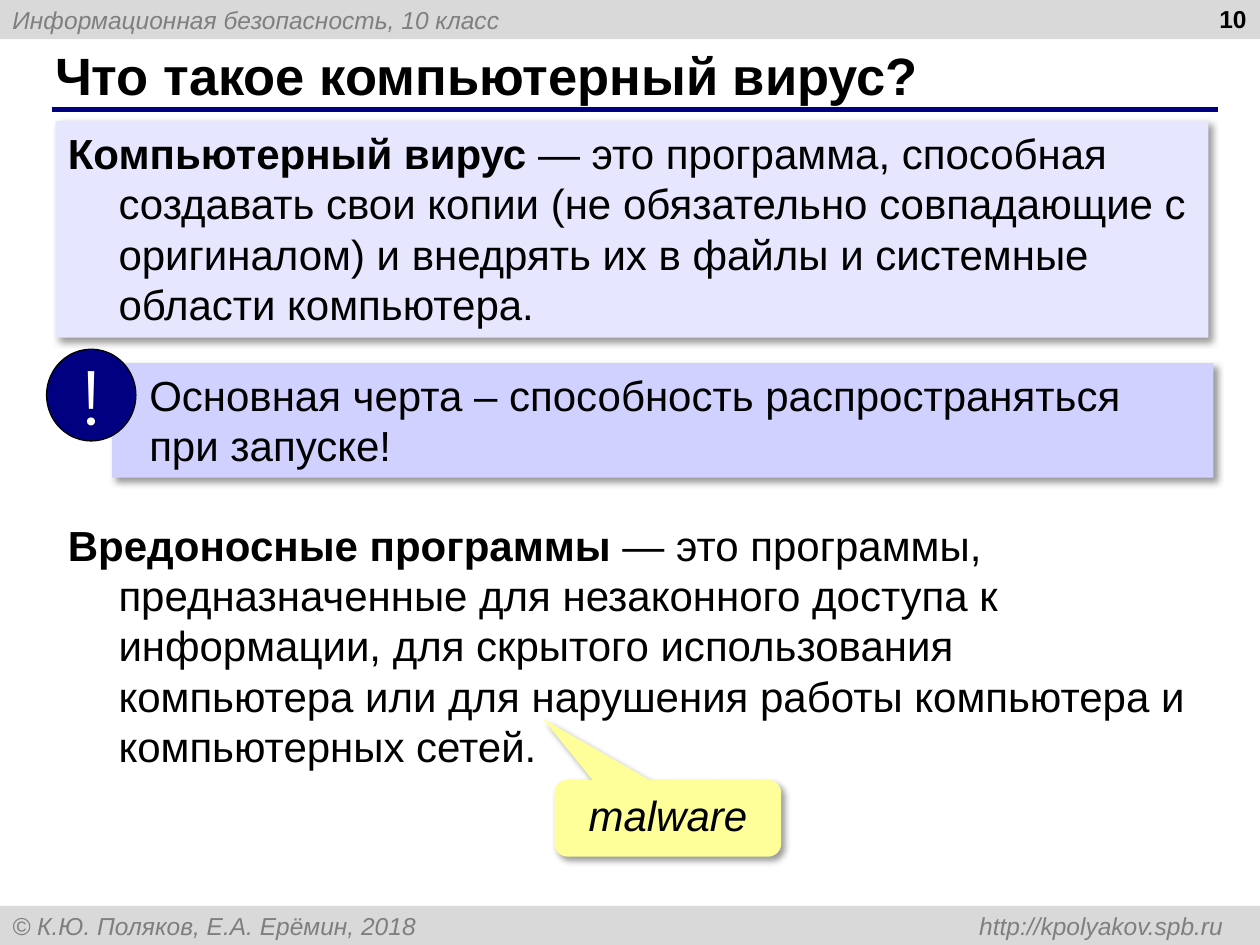
from lxml.etree import SubElement
from pptx import Presentation
from pptx.dml.color import RGBColor
from pptx.enum.shapes import MSO_CONNECTOR as Connector, MSO_SHAPE as Shape
from pptx.enum.text import MSO_ANCHOR as Anchor, PP_ALIGN as Align
from pptx.oxml.ns import qn
from pptx.util import Cm, Pt

COLORS = {
    "bar": "D9D9D9", "muted": "7F7F7F", "navy": "000080", "black": "000000",
    "white": "FFFFFF", "lavender": "E6E6FF", "violet": "D1D1FF", "yellow": "FFFF99",
}
WIDTH, HEIGHT, BAR = 25.4, 19.05, 0.79


def rgb(name):
    """Return the named colour."""
    return RGBColor.from_string(COLORS[name])


def add_box(slide, box, fill=None, kind=Shape.RECTANGLE):
    """Add a filled shape without outline, or a text box if there is no fill."""
    lengths = [Cm(length) for length in box]
    if fill is None:
        shape = slide.shapes.add_textbox(*lengths)
    else:
        shape = slide.shapes.add_shape(kind, *lengths)
        shape.fill.solid()
        shape.fill.fore_color.rgb = rgb(fill)
        shape.line.fill.background()
        shape.shadow.inherit = False
    shape.text_frame.word_wrap = True
    return shape


def write(shape, text, size, color="black", align=Align.LEFT, anchor=Anchor.TOP,
          font="Arial", bold=False, italic=False):
    """Set the text of a shape and format its runs."""
    frame = shape.text_frame
    frame.text = text
    frame.vertical_anchor = anchor
    paragraph = frame.paragraphs[0]
    paragraph.alignment = align
    for run in paragraph.runs:
        run.font.name, run.font.size = font, Pt(size)
        run.font.bold, run.font.italic = bold, italic
        run.font.color.rgb = rgb(color)
    return paragraph


def set_indent(paragraph, margin, indent=0):
    """Set the left margin and first-line indent of a paragraph."""
    properties = paragraph._p.get_or_add_pPr()
    properties.set("marL", str(Cm(margin)))
    properties.set("indent", str(Cm(indent)))


def add_shadow(shape):
    """Give a shape a soft shadow to the lower right."""
    effects = shape._element.spPr.find(qn("a:effectLst"))
    shadow = SubElement(effects, qn("a:outerShdw"), blurRad=str(Pt(4)), dist=str(Pt(3)),
                        dir="2700000", algn="tl", rotWithShape="0")
    color = SubElement(shadow, qn("a:srgbClr"), val=COLORS["black"])
    SubElement(color, qn("a:alpha"), val="40000")


def add_bar(slide, box, text, tab=None):
    """Add a grey page bar, with a right tab stop if one is given."""
    bar = add_box(slide, box, "bar")
    paragraph = write(bar, text, 14, "muted", anchor=Anchor.MIDDLE, italic=True)
    if tab:
        stops = SubElement(paragraph._p.get_or_add_pPr(), qn("a:tabLst"))
        SubElement(stops, qn("a:tab"), pos=str(Cm(tab)), algn="r")


def add_title(slide, box, text):
    """Add the heading with a rule under it."""
    left, top, width, height = box
    write(add_box(slide, box), text, 30, anchor=Anchor.MIDDLE, bold=True)
    rule_top = Cm(top + height + 0.05)
    rule = slide.shapes.add_connector(
        Connector.STRAIGHT, Cm(left + 0.18), rule_top, Cm(left + width + 0.43), rule_top)
    rule.line.color.rgb = rgb("navy")
    rule.line.width = Pt(3)
    SubElement(rule._element.spPr, qn("a:effectLst"))


def add_definition(slide, box, term, meaning, fill=None):
    """Add a definition with a bold term and a hanging indent."""
    shape = add_box(slide, box, fill)
    if fill:
        add_shadow(shape)
    paragraph = write(shape, term, 24, bold=True)
    set_indent(paragraph, 1.02, -1.02)
    run = paragraph.add_run()
    run.text = meaning
    run.font.name, run.font.size = "Arial", Pt(24)
    run.font.bold = False
    run.font.color.rgb = rgb("black")


def add_key_point(slide, box, text):
    """Add a panel with an exclamation badge on its upper left corner."""
    left, top, width, height = box
    panel = add_box(slide, box, "violet")
    add_shadow(panel)
    set_indent(write(panel, text, 24), 0.5)
    badge = add_box(slide, (left - 1.32, top - 0.28, 1.8, 1.85), "navy", Shape.OVAL)
    badge.line.color.rgb = rgb("black")
    badge.line.width = Pt(0.75)
    write(badge, "!", 44, "white", Align.CENTER, Anchor.MIDDLE, "Montserrat")
    badge.text_frame.word_wrap = False


def add_callout(slide, box, text):
    """Add a speech callout that points up and to the left."""
    callout = add_box(slide, box, "yellow", Shape.ROUNDED_RECTANGULAR_CALLOUT)
    for index, value in enumerate((-0.55, -1.29, 0.17)):
        callout.adjustments[index] = value
    add_shadow(callout)
    write(callout, text, 24, align=Align.CENTER, italic=True)


def main():
    """Build the slide and save it."""
    presentation = Presentation()
    presentation.slide_width, presentation.slide_height = Cm(WIDTH), Cm(HEIGHT)
    slide = presentation.slides.add_slide(presentation.slide_layouts[6])
    add_bar(slide, (0, 0, WIDTH, BAR), "Информационная безопасность, 10 класс")
    add_bar(slide, (0, HEIGHT - BAR, WIDTH, BAR),
            "© К.Ю. Поляков, Е.А. Ерёмин, 2018\thttp://kpolyakov.spb.ru", tab=24.41)
    add_title(slide, (0.86, 0.84, 23.27, 1.32), "Что такое компьютерный вирус?")
    write(add_box(slide, (19.46, -0.05, 5.92, 1.32)), "10", 14, align=Align.RIGHT, bold=True)
    add_definition(
        slide, (1.12, 2.44, 23.24, 4.37), "Компьютерный вирус",
        " — это программа, способная создавать свои копии (не обязательно совпадающие "
        "с оригиналом) и внедрять их в файлы и системные области компьютера.", "lavender")
    add_key_point(slide, (2.26, 7.32, 22.2, 2.31),
                  "Основная черта – способность распространяться при запуске!")
    add_definition(
        slide, (1.12, 10.34, 23.32, 5.38), "Вредоносные программы",
        " — это программы, предназначенные для незаконного доступа к информации, для "
        "скрытого использования компьютера или для нарушения работы компьютера и "
        "компьютерных сетей.")
    add_callout(slide, (11.18, 15.72, 4.57, 1.55), "malware")
    presentation.save("out.pptx")


if __name__ == "__main__":
    main()
